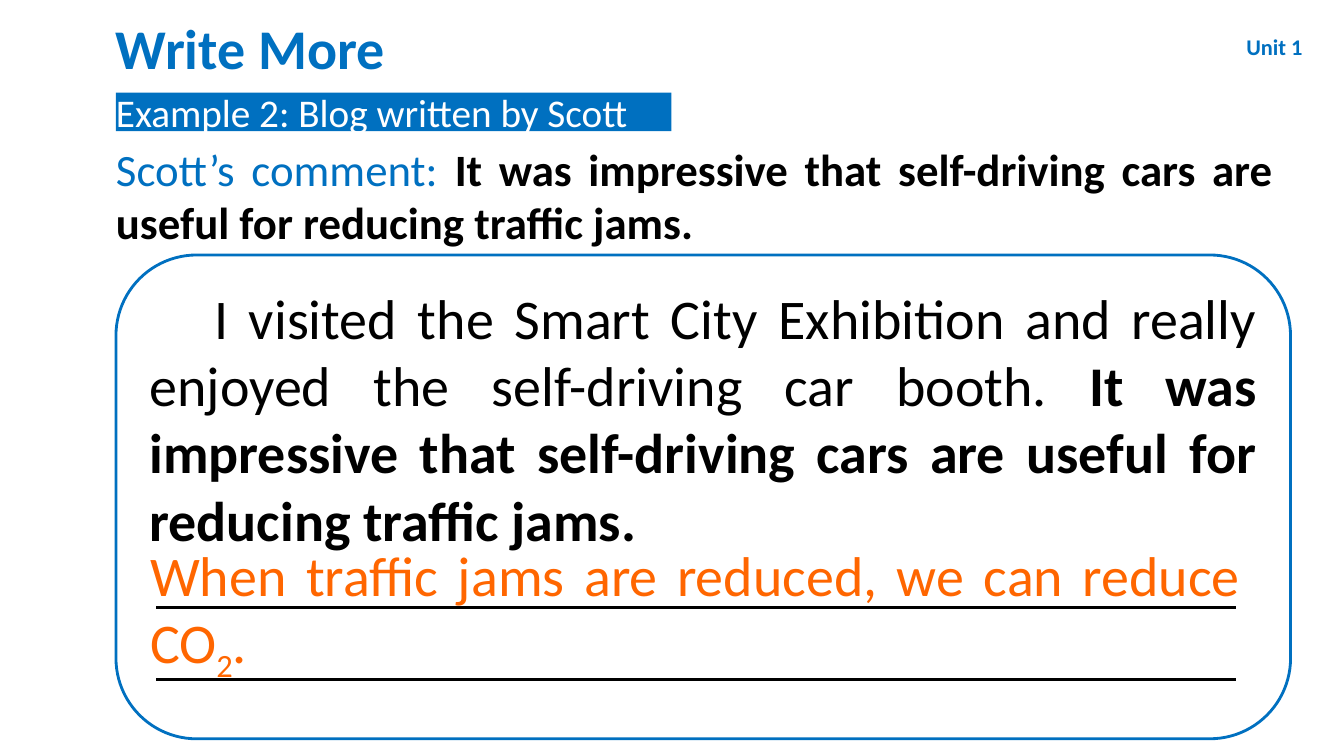
from lxml.etree import SubElement
from pptx import Presentation
from pptx.dml.color import RGBColor
from pptx.enum.shapes import MSO_CONNECTOR, MSO_SHAPE
from pptx.enum.text import MSO_ANCHOR, MSO_AUTO_SIZE, PP_ALIGN
from pptx.oxml.ns import qn
from pptx.util import Pt

SCALE = 9144
BLUE, ORANGE, BLACK, WHITE = "0070C0", "FF6600", "000000", "FFFFFF"
LEFT, CENTER, JUSTIFY = PP_ALIGN.LEFT, PP_ALIGN.CENTER, PP_ALIGN.JUSTIFY

COMMENT = "It was impressive that self-driving cars are useful for reducing traffic jams."
TITLE = [("Write More", BLUE, True, 0)]
UNIT = [("Unit 1", BLUE, True, 0)]
EXAMPLE = [("Example 2: Blog written by Scott", WHITE, False, 0)]
SCOTT = [("Scott’s comment: ", BLUE, False, 0), (COMMENT, BLACK, True, 0)]
BLOG = [
    ("I visited the Smart City Exhibition and really enjoyed the self-driving car booth. ", BLACK, False, 0),
    (COMMENT, BLACK, True, 0),
]
ANSWER = [
    ("When traffic jams are reduced, we can reduce CO", ORANGE, False, 0),
    ("2", ORANGE, False, -25000),
    (".", ORANGE, False, 0),
]

TITLE_AREA = (115, 15, 386, 63)
UNIT_AREA = (1220, 15, 88, 63)
EXAMPLE_AREA = (115, 92, 551, 38)
SCOTT_AREA = (115, 134, 1148, 119)
BLOG_AREA = (115, 253, 1165, 480)
ANSWER_AREA = (139, 540, 1101, 134)
RULE_LEFT, RULE_RIGHT = 155, 1226
RULE_HEIGHTS = (603, 674)
BLOG_INDENT = 64


def px(length):
    return round(length * SCALE)


def color(value):
    return RGBColor.from_string(value)


def write(box, spans, size, align, margins=(0, 0), before=0.2, anchor=MSO_ANCHOR.MIDDLE):
    frame = box.text_frame
    frame.word_wrap = True
    frame.auto_size = MSO_AUTO_SIZE.NONE
    frame.vertical_anchor = anchor
    frame.margin_left = frame.margin_right = px(margins[0])
    frame.margin_top = frame.margin_bottom = px(margins[1])
    para = frame.paragraphs[0]
    para.alignment = align
    para.space_before = Pt(size * before)
    for text, tint, bold, baseline in spans:
        span = para.add_run()
        span.text = text
        span.font.name = "Calibri"
        span.font.size = Pt(size)
        span.font.bold = bold
        span.font.color.rgb = color(tint)
        if baseline:
            span._r.get_or_add_rPr().set("baseline", str(baseline))
    return para


def add_text(page, area, *args, **options):
    box = page.shapes.add_textbox(*map(px, area))
    return write(box, *args, **options)


def add_panel(page, kind, area, fill, line=None):
    panel = page.shapes.add_shape(kind, *map(px, area))
    panel.shadow.inherit = False
    panel.fill.solid()
    panel.fill.fore_color.rgb = color(fill)
    if line:
        panel.line.color.rgb = color(line)
        panel.line.width = Pt(2)
    else:
        panel.line.fill.background()
    return panel


def add_rule(page, height):
    ends = (RULE_LEFT, height, RULE_RIGHT, height)
    rule = page.shapes.add_connector(MSO_CONNECTOR.STRAIGHT, *map(px, ends))
    rule.line.color.rgb = color(BLACK)
    rule.line.width = Pt(2)
    SubElement(rule._element.spPr, qn("a:effectLst"))


def main():
    deck = Presentation()
    deck.slide_width, deck.slide_height = px(1333), px(750)
    page = deck.slides.add_slide(deck.slide_layouts[5])

    title = page.shapes.title
    title.left, title.top, title.width, title.height = map(px, TITLE_AREA)
    write(title, TITLE, 40, LEFT)

    example = add_panel(page, MSO_SHAPE.RECTANGLE, EXAMPLE_AREA, BLUE)
    write(example, EXAMPLE, 28, JUSTIFY)
    add_text(page, SCOTT_AREA, SCOTT, 32, JUSTIFY)

    blog = add_panel(page, MSO_SHAPE.ROUNDED_RECTANGLE, BLOG_AREA, WHITE, BLUE)
    story = write(blog, BLOG, 40, JUSTIFY, margins=(10, 5), before=0, anchor=MSO_ANCHOR.TOP)
    story._p.get_or_add_pPr().set("indent", str(px(BLOG_INDENT)))

    add_text(page, ANSWER_AREA, ANSWER, 40, JUSTIFY, margins=(10, 5), before=0)
    add_text(page, UNIT_AREA, UNIT, 16, CENTER)
    for height in RULE_HEIGHTS:
        add_rule(page, height)

    deck.save("out.pptx")


if __name__ == "__main__":
    main()
